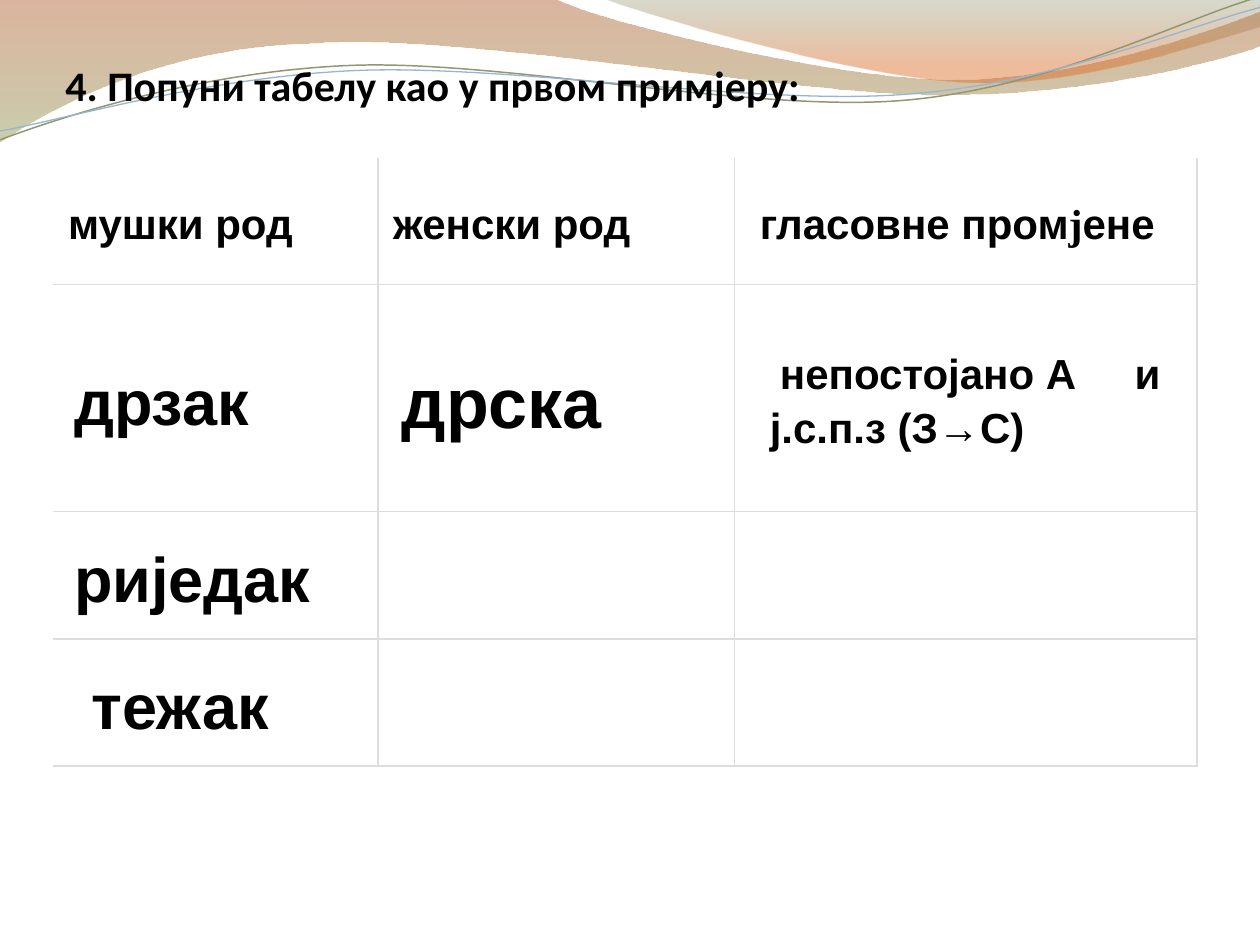
import math
from lxml import etree
from pptx import Presentation
from pptx import util as u
from pptx.dml.color import RGBColor
from pptx.enum import text
from pptx.oxml import parse_xml
from pptx.oxml.ns import nsdecls, qn

WIDE, HIGH = 10, 7.5
GREY = "DDDDDD"
COLS = [2.58, 2.83, 3.67]
ROWS = [1.01, 1.8, 1.01, 1.01]
TILT = -2.7

BAND = [(0, 0), [(4.4, -0.01)],
        [(4.76, 0.17), (6.64, 0.63), (7.58, 0.63)],
        [(8.53, 0.63), (9.58, 0.26), (10, 0.09)], [(10.01, 0.36)],
        [(9.83, 0.44), (8.7, 0.76), (7.46, 0.75)],
        [(6.22, 0.75), (3.82, 0.28), (2.57, 0.34)],
        [(1.29, 0.36), (0.46, 0.83), (-0.01, 1.13)], [(0, 0)]]
CREST = [(4.79, -0.01), [(5.09, 0.11), (6.82, 0.62), (7.69, 0.65)],
         [(8.56, 0.69), (9.61, 0.32), (10, 0.21)], [(10, 0)], [(4.79, -0.01)]]
OLIVE = [(0, 1.11), [(0.48, 0.93), (1.58, 0.57), (2.77, 0.52)],
         [(3.95, 0.47), (5.93, 0.89), (7.13, 0.8)],
         [(8.33, 0.71), (9.38, 0.15), (9.98, -0.02)]]
BLUE = [(0, 1.04), [(0.47, 0.96), (1.64, 0.61), (2.83, 0.56)],
        [(4.03, 0.51), (5.97, 0.84), (7.17, 0.75)],
        [(8.36, 0.67), (9.41, 0.21), (10, 0.06)]]


def color(code):
    """Turn a hex string into a colour."""
    return RGBColor.from_string(code)


def level(curve, mid):
    """Turn a curve about a point to undo the tilt."""
    sin, cos = math.sin(math.radians(-TILT)), math.cos(math.radians(-TILT))

    def turn(spot):
        x, y = spot[0] - mid[0], spot[1] - mid[1]
        return mid[0] + x * cos - y * sin, mid[1] + x * sin + y * cos

    return [turn(curve[0])] + [[turn(s) for s in part] for part in curve[1:]]


def outline(slide, curve, close):
    """Draw straight and cubic parts as a freeform without shadow."""
    ends = [curve[0]] + [part[-1] for part in curve[1:]]
    spots = [(u.Inches(x), u.Inches(y)) for x, y in ends]
    maker = slide.shapes.build_freeform(*spots[0], scale=1.0)
    maker.add_line_segments(spots[1:], close=close)
    shape = maker.convert_to_shape()
    shape.shadow.inherit = False
    lines = list(shape.element.iter(qn("a:lnTo")))
    for line, part in zip(lines, curve[1:]):
        if len(part) == 3:
            line.tag = qn("a:cubicBezTo")
            for i, (x, y) in enumerate(part[:2]):
                spot = etree.Element(qn("a:pt"), x=str(u.Inches(x) - shape.left),
                                     y=str(u.Inches(y) - shape.top))
                line.insert(i, spot)
    return shape


def wave(slide, curve, stops):
    """Draw a closed wave with a see-through gradient running down."""
    shape = outline(slide, curve, True)
    shape.line.fill.background()
    marks = "".join(
        f'<a:gs pos="{pos * 1000}"><a:srgbClr val="{code}">'
        f'<a:alpha val="{alpha * 1000}"/></a:srgbClr></a:gs>'
        for pos, code, alpha in stops)
    fill = parse_xml(f'<a:gradFill {nsdecls("a")} rotWithShape="1"><a:gsLst>{marks}'
                     '</a:gsLst><a:lin ang="5400000" scaled="0"/></a:gradFill>')
    shape.element.spPr.find(qn("a:custGeom")).addnext(fill)


def thread(slide, curve, mid, code, width):
    """Draw an open thin tilted curve."""
    shape = outline(slide, level(curve, mid), False)
    shape.rotation = TILT
    shape.fill.background()
    shape.line.color.rgb = color(code)
    shape.line.width = u.Pt(width)


def style(font, size, face="Arial"):
    """Set a bold black font."""
    font.size, font.name, font.bold = u.Pt(size), face, True
    font.color.rgb = color("000000")


def frame(cell, row, col):
    """Give a cell grey inner, right and bottom borders."""
    props = cell._tc.get_or_add_tcPr()
    sides = {"lnL": col > 0, "lnR": True, "lnT": row > 0, "lnB": True}
    for i, (side, shown) in enumerate(sides.items()):
        fill = (f'<a:solidFill><a:srgbClr val="{GREY}"/></a:solidFill>'
                if shown else "<a:noFill/>")
        props.insert(i, parse_xml(f'<a:{side} {nsdecls("a")} w="12700">{fill}</a:{side}>'))


def write(cell, size, left, runs):
    """Write runs of words and faces into a cell."""
    cell.margin_left = u.Inches(left)
    para = cell.text_frame.paragraphs[0]
    para.line_spacing = 1.15
    for words, face in runs:
        run = para.add_run()
        run.text = words
        style(run.font, size, face)
    return para


def change(cell):
    """Write the solved sound changes with one widened gap."""
    parts = ["непостојано А", " ", "и ј.с.п.з (З→С)"]
    para = write(cell, 24, 0.28, [(part, "Arial") for part in parts])
    para.runs[1].font._element.set("spc", "2670")
    props = para._p.get_or_add_pPr()
    props.set("marL", "0")
    props.set("indent", str(u.Inches(0.08)))


def grid(slide):
    """Add the bare table."""
    sizes = [u.Inches(n) for n in (0.42, 1.25, sum(COLS), sum(ROWS))]
    table = slide.shapes.add_table(len(ROWS), len(COLS), *sizes).table
    table.first_row = table.horz_banding = False
    for col, width in zip(table.columns, COLS):
        col.width = u.Inches(width)
    for row, height in zip(table.rows, ROWS):
        row.height = u.Inches(height)
    for r in range(len(ROWS)):
        for c in range(len(COLS)):
            cell = table.cell(r, c)
            cell.fill.solid()
            cell.fill.fore_color.rgb = color("FFFFFF")
            cell.vertical_anchor = text.MSO_ANCHOR.MIDDLE
            cell.margin_left = cell.margin_right = u.Inches(0.03)
            cell.margin_top = cell.margin_bottom = u.Inches(0.03)
            frame(cell, r, c)
    return table


def title(slide, words):
    """Add the task line."""
    box = slide.shapes.add_textbox(*[u.Inches(n) for n in (0.42, 0.42, 6.09, 0.5)])
    body = box.text_frame
    body.word_wrap = False
    body.auto_size = text.MSO_AUTO_SIZE.SHAPE_TO_FIT_TEXT
    body.vertical_anchor = text.MSO_ANCHOR.MIDDLE
    body.text = words
    style(body.paragraphs[0].font, 24, "Calibri")


def main():
    """Build and save the slide."""
    deck = Presentation()
    deck.slide_width, deck.slide_height = u.Inches(WIDE), u.Inches(HIGH)
    slide = deck.slides.add_slide(deck.slide_layouts[6])
    wave(slide, BAND, [(0, "AF5C29", 45), (100, "9DA66B", 55)])
    wave(slide, CREST, [(0, "7D835B", 30), (80, "DD6B24", 45)])
    thread(slide, OLIVE, (4.99, 0.57), "929772", 0.85)
    thread(slide, BLUE, (5, 0.59), "94B6D2", 0.75)
    table = grid(slide)
    words = [
        (0, 0, 24, 0.12, [("мушки род", "Arial")]),
        (0, 1, 24, 0.12, [("женски род", "Arial")]),
        (0, 2, 24, 0.2, [("гласовне пром", "Arial"), ("ј", "Times New Roman"),
                         ("ене", "Arial")]),
        (1, 0, 36, 0.17, [("дрзак", "Arial")]),
        (1, 1, 40, 0.19, [("дрска", "Arial")]),
        (2, 0, 36, 0.17, [("риједак", "Arial")]),
        (3, 0, 36, 0.31, [("тежак", "Arial")]),
    ]
    for row, col, *rest in words:
        write(table.cell(row, col), *rest)
    change(table.cell(1, 2))
    title(slide, "4. Попуни табелу као у првом примјеру:")
    deck.save("out.pptx")


if __name__ == "__main__":
    main()
